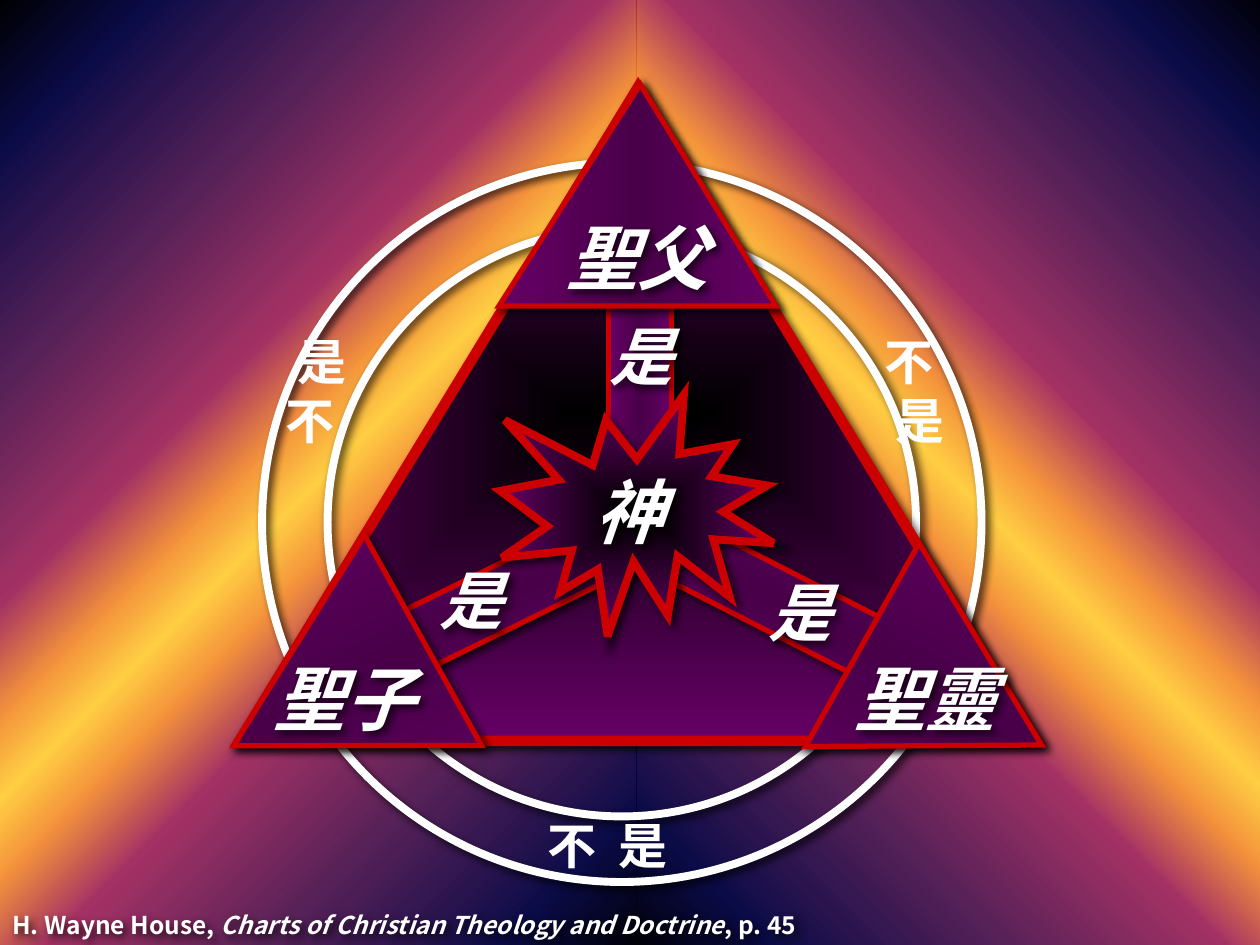
from lxml import etree
from pptx import Presentation
from pptx.dml.color import RGBColor
from pptx.enum.shapes import MSO_SHAPE as Shape
from pptx.enum.text import MSO_AUTO_SIZE as AutoSize, PP_ALIGN as Align
from pptx.oxml import parse_xml
from pptx.oxml.ns import nsdecls, qn
from pptx.util import Inches, Pt

FONT = "Noto Sans CJK JP"
COLORS = {
    "white": "FFFFFF", "black": "000000", "red": "CC0000",
    "purple": "660066", "plum": "490049",
    "navy": "000040", "violet": "400040", "crimson": "8F0040",
    "orange": "F27300", "gold": "FFBF00",
}

# Gradients: (position %, color, opacity %)
SUNSET_HALF = [(0, "black", 100), (10, "navy", 95), (25, "violet", 86),
               (38, "crimson", 80), (45, "orange", 76)]
SUNSET = (SUNSET_HALF + [(50, "gold", 73)]
          + [(100 - position, color, opacity)
             for position, color, opacity in reversed(SUNSET_HALF)])
BAND = [(0, "purple", 100), (50, "plum", 100), (100, "purple", 100)]
GLOW = [(0, "black", 100), (100, "purple", 100)]

# Background halves: left, gradient angle
BACKDROPS = [(5.05, 315), (-0.06, 45)]
RING_CENTER = (4.935, 4.145)
RING_DIAMETERS = [5.71, 4.67]
# Bars from the center to each person: left, top, width, rotation
BARS = [(5.11, 4.57, 2.33, 27), (3.17, 4.42, 1.92, 333.8), (4.12, 2.54, 1.92, 90)]
# Corner triangles: left, top, width, height, rotation, apex
CORNERS = [(6.63, 4.7, 1.85, 1.63, 119.2, 0.5),
           (1.65, 4.64, 1.91, 1.72, 240.9, 0.5),
           (3.96, 0.67, 2.2, 1.76, 0, 0.51)]
# Italic labels: text, left, top, width, height, size, alignment
LABELS = [
    ("是", 4.5, 2.47, 1.17, 0.7, 36, Align.CENTER),
    ("是", 6, 4.5, 1.17, 0.7, 36, Align.LEFT),
    ("是", 2.92, 4.41, 1.17, 0.7, 36, Align.RIGHT),
    ("聖子", 2.08, 5.15, 2, 0.77, 40, Align.LEFT),
    ("神", 4.25, 3.67, 1.5, 0.77, 40, Align.CENTER),
    ("聖父", 4.06, 1.65, 2, 0.77, 40, Align.CENTER),
    ("聖靈", 6, 5.15, 2, 0.77, 40, Align.RIGHT),
]
# Ring labels: lines, left, top, width, height; 是 is indented on its own line
RING_LABELS = [
    (["不", "是"], 6.92, 2.58, 1.25, 1.03),
    (["是", "不"], 2.17, 2.58, 1.25, 1.03),
    (["不\t是"], 4.25, 6.42, 1.58, 0.57),
]
INDENTS = {"是": 0.09}
RING_TAB = 0.56
CITATION = [("H. Wayne House, ", False),
            ("Charts of Christian Theology and Doctrine", True),
            (", p. 45", False)]


def set_gradient(shape, stops, angle=None):
    """Fill with a linear gradient, or one from the center when no angle is given."""
    shape.fill.background()
    stop_xml = "".join(
        f'<a:gs pos="{position * 1000}"><a:srgbClr val="{COLORS[color]}">'
        f'<a:alpha val="{opacity * 1000}"/></a:srgbClr></a:gs>'
        for position, color, opacity in stops)
    if angle is None:
        direction = ('<a:path path="shape"><a:fillToRect l="50000" t="50000" '
                     'r="50000" b="50000"/></a:path>')
    else:
        direction = f'<a:lin ang="{angle * 60000}" scaled="0"/>'
    properties = shape.element.spPr
    properties.replace(properties.find(qn("a:noFill")), parse_xml(
        f'<a:gradFill {nsdecls("a")} rotWithShape="1"><a:gsLst>{stop_xml}</a:gsLst>'
        f'{direction}</a:gradFill>'))


def set_shadow(shape):
    shape.shadow.inherit = False
    shape.element.spPr.find(qn("a:effectLst")).append(parse_xml(
        f'<a:outerShdw {nsdecls("a")} blurRad="{Pt(5)}" dist="{Pt(3)}" dir="2700000" '
        f'algn="ctr" rotWithShape="0"><a:srgbClr val="{COLORS["black"]}">'
        '<a:alpha val="75000"/></a:srgbClr></a:outerShdw>'))


def add_figure(slide, kind, left, top, width, height, stops=None, angle=None,
               line=None, line_width=3, rotation=0, shadow=True):
    shape = slide.shapes.add_shape(
        kind, Inches(left), Inches(top), Inches(width), Inches(height))
    shape.rotation = rotation
    if stops:
        set_gradient(shape, stops, angle)
    else:
        shape.fill.background()
    if line:
        shape.line.color.rgb = RGBColor.from_string(COLORS[line])
        shape.line.width = Pt(line_width)
        etree.SubElement(shape.line._get_or_add_ln(), qn("a:miter")).set("lim", "800000")
    else:
        shape.line.fill.background()
    if shadow:
        set_shadow(shape)
    else:
        shape.shadow.inherit = False
    return shape


def add_text(slide, lines, left, top, width, height, size=28, align=Align.LEFT,
             shadow=False, indents=None, tab=None):
    """Add a text box; each line is a list of (text, italic) runs."""
    box = slide.shapes.add_textbox(
        Inches(left), Inches(top), Inches(width), Inches(height))
    frame = box.text_frame
    frame.word_wrap = True
    frame.auto_size = AutoSize.SHAPE_TO_FIT_TEXT
    for index, runs in enumerate(lines):
        paragraph = frame.paragraphs[0] if index == 0 else frame.add_paragraph()
        paragraph.alignment = align
        properties = paragraph._p.get_or_add_pPr()
        indent = (indents or {}).get(runs[0][0])
        if indent:
            properties.set("marL", str(Inches(indent)))
        if tab:
            properties.append(parse_xml(
                f'<a:tabLst {nsdecls("a")}><a:tab pos="{Inches(tab)}" algn="l"/></a:tabLst>'))
        for text, italic in runs:
            run = paragraph.add_run()
            run.text = text
            font = run.font
            font.size, font.bold, font.italic = Pt(size), True, italic
            font.color.rgb = RGBColor.from_string(COLORS["white"])
            font.name = FONT
            etree.SubElement(run._r.get_or_add_rPr(), qn("a:ea")).set("typeface", FONT)
    if shadow:
        set_shadow(box)


def main():
    presentation = Presentation()
    presentation.slide_width, presentation.slide_height = Inches(10), Inches(7.5)
    slide = presentation.slides.add_slide(presentation.slide_layouts[6])

    # Background
    for left, angle in BACKDROPS:
        add_figure(slide, Shape.RECTANGLE, left, 0, 5.11, 7.69, SUNSET, angle, shadow=False)

    # Rings
    for diameter in RING_DIAMETERS:
        left, top = (center - diameter / 2 for center in RING_CENTER)
        add_figure(slide, Shape.OVAL, left, top, diameter, diameter,
                   line="white", line_width=4.5)

    # Large triangle, bars, corners and central burst
    add_figure(slide, Shape.ISOSCELES_TRIANGLE, 1.9, 0.69, 6.33, 5.19, GLOW,
               line="red", line_width=6)
    for left, top, width, rotation in BARS:
        add_figure(slide, Shape.RECTANGLE, left, top, width, 0.5, BAND, 90,
                   line="red", rotation=rotation)
    for left, top, width, height, rotation, apex in CORNERS:
        corner = add_figure(slide, Shape.ISOSCELES_TRIANGLE, left, top, width, height,
                            BAND, 0, line="red", rotation=rotation)
        corner.adjustments[0] = apex
    add_figure(slide, Shape.EXPLOSION1, 3.97, 3.13, 2.17, 1.92, GLOW,
               line="red", line_width=4.5)

    # Labels and citation
    for text, left, top, width, height, size, align in LABELS:
        add_text(slide, [[(text, True)]], left, top, width, height,
                 size=size, align=align, shadow=True)
    add_text(slide, [CITATION], 0, 7.17, 6.5, 0.33, size=14, shadow=True)
    for lines, *position in RING_LABELS:
        add_text(slide, [[(line, False)] for line in lines], *position,
                 indents=INDENTS, tab=RING_TAB if len(lines) == 1 else None)

    presentation.save("out.pptx")


if __name__ == "__main__":
    main()
